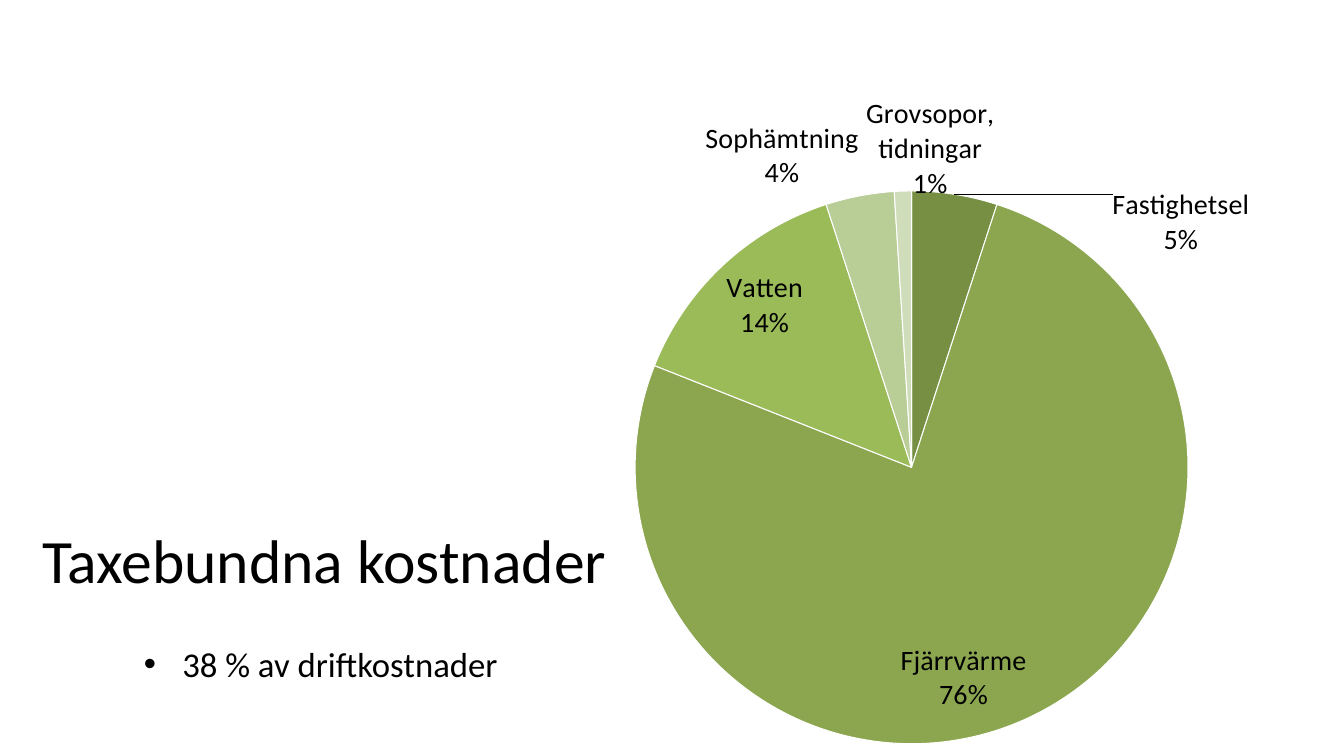
"""Build the slide on tariff-bound costs with a pie chart."""
import pptx
import pptx.chart.data
import pptx.dml.color
import pptx.enum.chart
import pptx.enum.text
import pptx.oxml
import pptx.oxml.ns
import pptx.util
from pptx.util import Inches

RGBColor = pptx.dml.color.RGBColor
LabelPosition = pptx.enum.chart.XL_LABEL_POSITION
BLACK = RGBColor(0x00, 0x00, 0x00)
WHITE = RGBColor(0xFF, 0xFF, 0xFF)
DARK_GREEN = RGBColor(0x76, 0x8F, 0x43)
MID_GREEN = RGBColor(0x8B, 0xA6, 0x4F)
GREEN = RGBColor(0x9B, 0xBB, 0x59)
LIGHT_GREEN = RGBColor(0xB9, 0xCD, 0x96)
PALE_GREEN = RGBColor(0xD0, 0xDD, 0xBB)
FONT = "Calibri"
COSTS = [
    ("Fastighetsel", 5, DARK_GREEN, LabelPosition.OUTSIDE_END, (0.17, 0.09)),
    ("Fjärrvärme", 76, MID_GREEN, LabelPosition.INSIDE_END, None),
    ("Vatten", 14, GREEN, LabelPosition.INSIDE_END, None),
    ("Sophämtning", 4, LIGHT_GREEN, LabelPosition.OUTSIDE_END, None),
    ("Grovsopor, tidningar", 1, PALE_GREEN, LabelPosition.OUTSIDE_END, (0.03, 0.02)),
]


def write_text(shape, text, size, align, anchor, space_before=0):
    frame = shape.text_frame
    frame.word_wrap = True
    frame.auto_size = pptx.enum.text.MSO_AUTO_SIZE.NONE
    frame.vertical_anchor = anchor
    paragraph = frame.paragraphs[0]
    paragraph.alignment = align
    paragraph.space_before = pptx.util.Pt(space_before)
    run = paragraph.add_run()
    run.text = text
    run.font.name = FONT
    run.font.size = pptx.util.Pt(size)
    run.font.color.rgb = BLACK
    return paragraph


def manual_layout(**values):
    namespace = pptx.oxml.ns.nsdecls("c")
    items = "".join(f'<c:{name} val="{value}"/>' for name, value in values.items())
    return pptx.oxml.parse_xml(
        f"<c:layout {namespace}><c:manualLayout>{items}</c:manualLayout></c:layout>"
    )


presentation = pptx.Presentation()
presentation.slide_width = Inches(13.33)
presentation.slide_height = Inches(7.5)
slide = presentation.slides.add_slide(presentation.slide_layouts[5])

title = slide.shapes.title
title.left, title.top = Inches(-2.78), Inches(4.92)
title.width, title.height = Inches(12), Inches(1.25)
write_text(title, "Taxebundna kostnader", size=44,
           align=pptx.enum.text.PP_ALIGN.CENTER, anchor=pptx.enum.text.MSO_ANCHOR.MIDDLE)

share_box = slide.shapes.add_textbox(Inches(1.33), Inches(6.33), Inches(3.94), Inches(0.5))
share = write_text(share_box, "38 % av driftkostnader", size=24.8, space_before=5,
                   align=pptx.enum.text.PP_ALIGN.LEFT, anchor=pptx.enum.text.MSO_ANCHOR.TOP)
properties = share._p.get_or_add_pPr()
properties.set("marL", str(Inches(0.38)))
properties.set("indent", str(Inches(-0.38)))
drawing_namespace = pptx.oxml.ns.nsdecls("a")
properties.append(pptx.oxml.parse_xml(f'<a:buFont {drawing_namespace} typeface="Arial"/>'))
properties.append(pptx.oxml.parse_xml(f'<a:buChar {drawing_namespace} char="•"/>'))

chart_data = pptx.chart.data.CategoryChartData()
chart_data.categories = [cost[0] for cost in COSTS]
chart_data.add_series("Series 1", [cost[1] for cost in COSTS])
chart = slide.shapes.add_chart(
    pptx.enum.chart.XL_CHART_TYPE.PIE,
    Inches(4.38), Inches(0), Inches(9.14), Inches(7.54), chart_data,
).chart
chart.has_title = False
chart.has_legend = False
chart.font.name = FONT
chart.font.size = pptx.util.Pt(20)
chart.font.color.rgb = BLACK
plot = chart.plots[0]
plot.vary_by_categories = True
series = plot.series[0]

labels = series.data_labels
labels.show_value = False
labels.show_category_name = True
labels.show_percentage = True
labels.number_format = "0%"
labels.number_format_is_linked = False
labels.font.size = pptx.util.Pt(20)

for index, (name, share_value, color, position, offset) in enumerate(COSTS):
    point = series.points[index]
    point.format.fill.solid()
    point.format.fill.fore_color.rgb = color
    point.format.line.color.rgb = WHITE
    point.format.line.width = pptx.util.Pt(0.75)
    point.data_label.font.size = pptx.util.Pt(20)
    point.data_label.position = position
    label = series._element.xpath(f".//c:dLbl[c:idx/@val='{index}']")[0]
    for tag, shown in (("showVal", "0"), ("showCatName", "1"), ("showPercent", "1")):
        label.find(pptx.oxml.ns.qn(f"c:{tag}")).set("val", shown)
    if offset:
        label.insert(1, manual_layout(x=offset[0], y=offset[1]))

for bubble_flag in series._element.xpath(".//c:showBubbleSize"):
    separator = pptx.oxml.parse_xml(f'<c:separator {pptx.oxml.ns.nsdecls("c")}>\n</c:separator>')
    bubble_flag.addnext(separator)

plot_area = chart._chartSpace.xpath(".//c:plotArea")[0]
for old_layout in plot_area.findall(pptx.oxml.ns.qn("c:layout")):
    plot_area.remove(old_layout)
plot_area.insert(0, manual_layout(layoutTarget="inner", xMode="edge", yMode="edge",
                                  x=0.21, y=0.25, w=0.6, h=0.73))

presentation.save("out.pptx")
